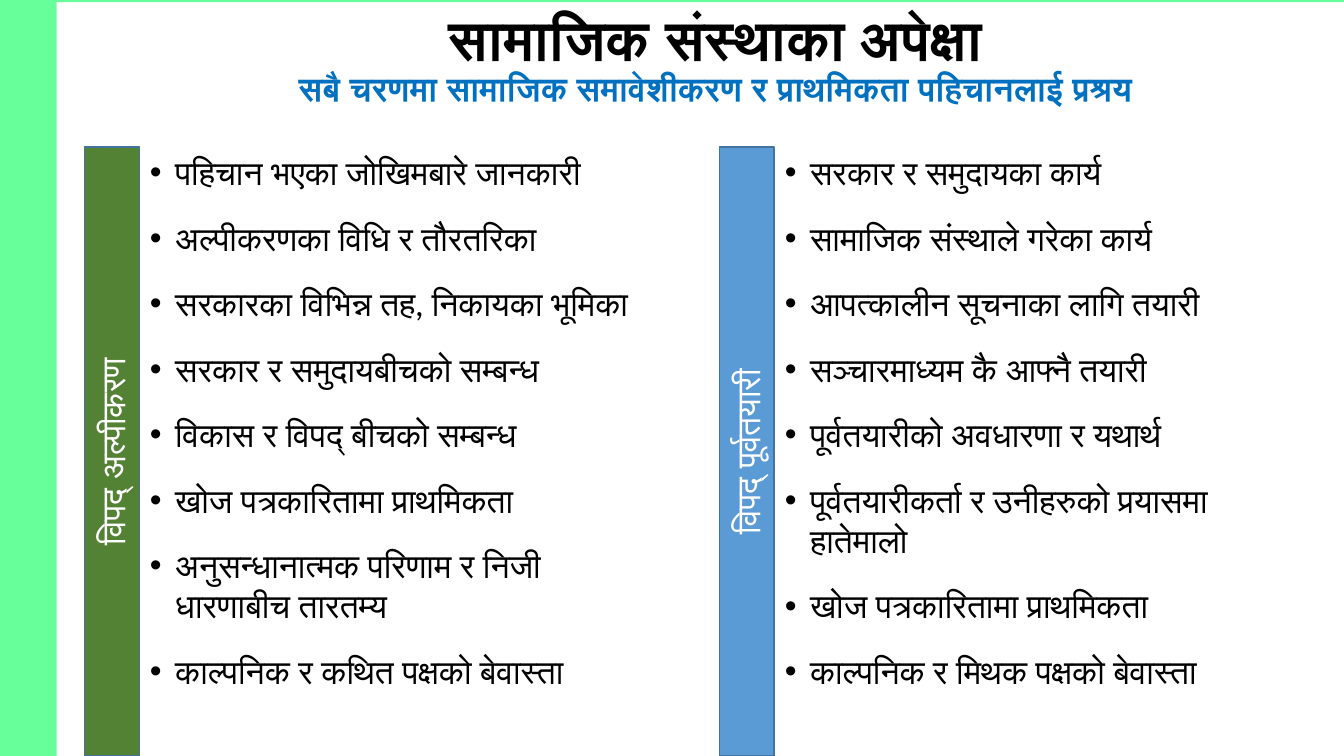
from lxml import etree
from pptx import Presentation
from pptx.dml.color import RGBColor
from pptx.enum.shapes import MSO_SHAPE
from pptx.enum.text import MSO_ANCHOR, MSO_AUTO_SIZE, PP_ALIGN
from pptx.oxml.ns import qn
from pptx.util import Pt

RECT = MSO_SHAPE.RECTANGLE
CENTER, LEFT = PP_ALIGN.CENTER, PP_ALIGN.LEFT
MIDDLE, TOP = MSO_ANCHOR.MIDDLE, MSO_ANCHOR.TOP
NO_FIT = MSO_AUTO_SIZE.NONE

MINT = RGBColor(0x66, 0xFF, 0x99)
GREEN = RGBColor(0x54, 0x82, 0x35)
BLUE = RGBColor(0x5B, 0x9B, 0xD5)
OUTLINE = RGBColor(0x43, 0x73, 0x9E)
SUBTITLE_BLUE = RGBColor(0x00, 0x70, 0xC0)
BLACK = RGBColor(0, 0, 0)
WHITE = RGBColor(0xFF, 0xFF, 0xFF)

TITLE = "सामाजिक संस्थाका अपेक्षा"
SUBTITLE = "सबै चरणमा सामाजिक समावेशीकरण र प्राथमिकता पहिचानलाई प्रश्रय"
COLUMNS = [
    ("विपद् अल्पीकरण", GREEN, 60.5, 372, [
        "पहिचान भएका जोखिमबारे जानकारी",
        "अल्पीकरणका विधि र तौरतरिका",
        "सरकारका विभिन्न तह, निकायका भूमिका",
        "सरकार र समुदायबीचको सम्बन्ध",
        "विकास र विपद् बीचको सम्बन्ध",
        "खोज पत्रकारितामा प्राथमिकता",
        "अनुसन्धानात्मक परिणाम र निजी धारणाबीच तारतम्य",
        "काल्पनिक र कथित पक्षको बेवास्ता",
    ]),
    ("विपद् पूर्वतयारी", BLUE, 514, 381, [
        "सरकार र समुदायका कार्य",
        "सामाजिक संस्थाले गरेका कार्य",
        "आपत्कालीन सूचनाका लागि तयारी",
        "सञ्चारमाध्यम कै आफ्नै तयारी",
        "पूर्वतयारीको अवधारणा र यथार्थ",
        "पूर्वतयारीकर्ता र उनीहरुको प्रयासमा हातेमालो",
        "खोज पत्रकारितामा प्राथमिकता",
        "काल्पनिक र मिथक पक्षको बेवास्ता",
    ]),
]

SLIDE_W, SLIDE_H = 960, 540
COLUMN_TOP = 105
BAR_LENGTH = SLIDE_H - COLUMN_TOP
BAR_WIDTH = 39
TEXT_OFFSET = 39.5
INDENT = 18


def add_run(p, text, size, font, color, bold=False):
    r = p.add_run()
    r.text = text
    r.font.size = Pt(size)
    r.font.name = font
    r.font.bold = bold
    r.font.color.rgb = color


def add_rect(s, x, y, w, h, fill):
    sp = s.shapes.add_shape(RECT, Pt(x), Pt(y), Pt(w), Pt(h))
    sp.shadow.inherit = False
    sp.fill.solid()
    sp.fill.fore_color.rgb = fill
    sp.line.fill.background()
    return sp


def add_title(s):
    sp = s.shapes.title
    sp.left, sp.top, sp.width, sp.height = Pt(127.5), Pt(11), Pt(767), Pt(64)
    tf = sp.text_frame
    tf.word_wrap = True
    tf.auto_size = NO_FIT
    tf.vertical_anchor = MIDDLE
    p = tf.paragraphs[0]
    p.alignment = CENTER
    p.line_spacing = 0.9
    add_run(p, TITLE, 40, "Lato", BLACK, True)
    p.add_line_break()
    add_run(p, SUBTITLE, 24, "Lato", SUBTITLE_BLUE, True)


def add_bar(s, label, fill, x):
    left = x + (BAR_WIDTH - BAR_LENGTH) / 2
    top = COLUMN_TOP + (BAR_LENGTH - BAR_WIDTH) / 2
    sp = add_rect(s, left, top, BAR_LENGTH, BAR_WIDTH, fill)
    sp.rotation = 270
    sp.line.color.rgb = OUTLINE
    sp.line.width = Pt(1)
    tf = sp.text_frame
    tf.vertical_anchor = MIDDLE
    p = tf.paragraphs[0]
    p.alignment = CENTER
    add_run(p, label, 24, "Calibri", WHITE)


def add_bullets(s, items, x, width):
    sp = s.shapes.add_textbox(Pt(x), Pt(COLUMN_TOP), Pt(width), Pt(BAR_LENGTH))
    tf = sp.text_frame
    tf.word_wrap = True
    tf.auto_size = NO_FIT
    tf.vertical_anchor = TOP
    for i, item in enumerate(items):
        p = tf.add_paragraph() if i else tf.paragraphs[0]
        p.alignment = LEFT
        p.space_before = Pt(18 if i else 0)
        pPr = p._p.get_or_add_pPr()
        pPr.set("marL", str(Pt(INDENT)))
        pPr.set("indent", str(-Pt(INDENT)))
        etree.SubElement(pPr, qn("a:buFont")).set("typeface", "Arial")
        etree.SubElement(pPr, qn("a:buChar")).set("char", "•")
        add_run(p, item, 24, "Lato", BLACK)


def main():
    prs = Presentation()
    prs.slide_width, prs.slide_height = Pt(SLIDE_W), Pt(SLIDE_H)
    s = prs.slides.add_slide(prs.slide_layouts[5])
    s.background.fill.solid()
    s.background.fill.fore_color.rgb = WHITE
    add_rect(s, 0, 0, 40.5, SLIDE_H, MINT)
    add_rect(s, 0, 0, SLIDE_W, 1.5, MINT)
    add_title(s)
    for label, fill, x, width, items in COLUMNS:
        add_bar(s, label, fill, x)
        add_bullets(s, items, x + TEXT_OFFSET, width)
    prs.save("out.pptx")


if __name__ == "__main__":
    main()
